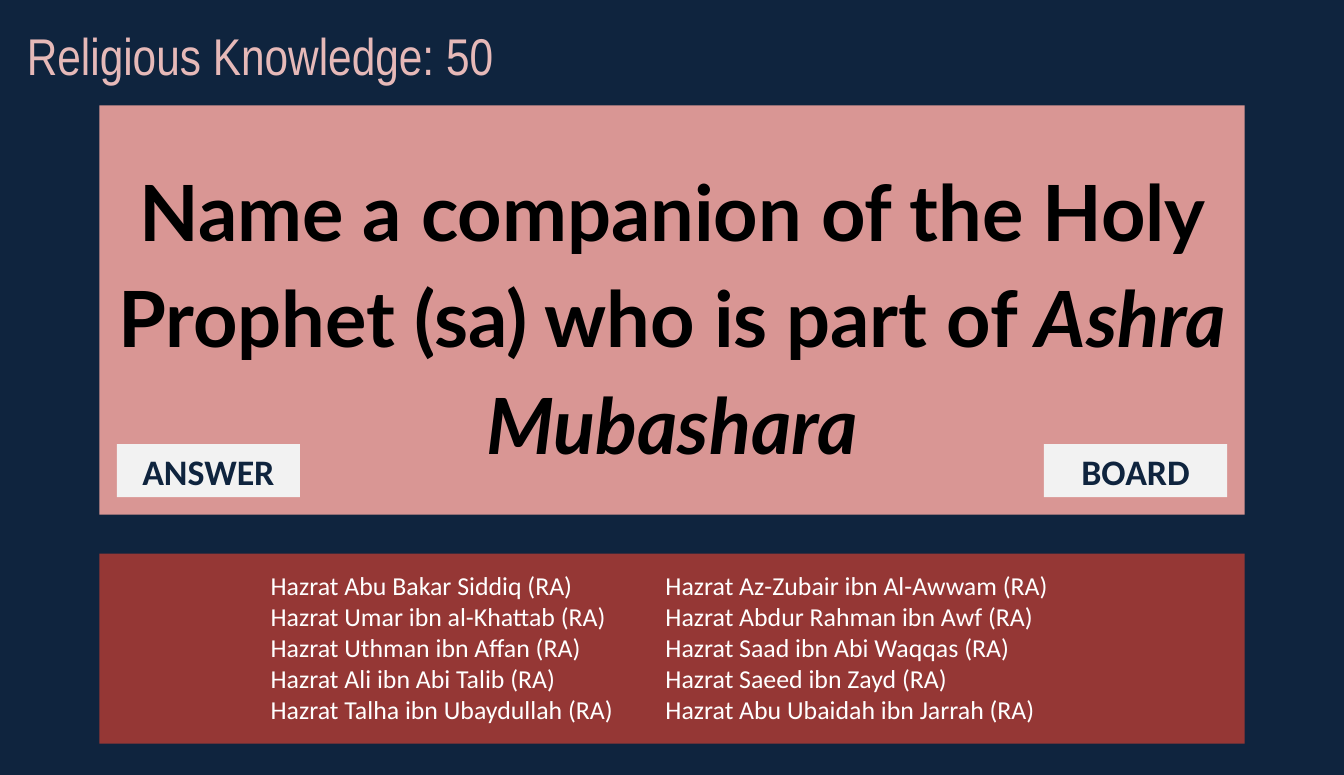
from pptx import Presentation
from pptx.dml.color import RGBColor as Rgb
from pptx.enum.shapes import MSO_SHAPE as Kind
from pptx.enum.text import MSO_ANCHOR as Anchor, MSO_AUTO_SIZE as Fit, PP_ALIGN as Align
from pptx.util import Cm, Pt

HUES = {
    "navy": "0F243E",
    "rose": "D99694",
    "brick": "953735",
    "blush": "E6B9B8",
    "pale": "F2F2F2",
    "black": "000000",
    "white": "FFFFFF",
}
NAMES = [
    ["Hazrat Abu Bakar Siddiq (RA)", "Hazrat Umar ibn al-Khattab (RA)",
     "Hazrat Uthman ibn Affan (RA)", "Hazrat Ali ibn Abi Talib (RA)",
     "Hazrat Talha ibn Ubaydullah (RA)"],
    ["Hazrat Az-Zubair ibn Al-Awwam (RA)", "Hazrat Abdur Rahman ibn Awf (RA)",
     "Hazrat Saad ibn Abi Waqqas (RA)", "Hazrat Saeed ibn Zayd (RA)",
     "Hazrat Abu Ubaidah ibn Jarrah (RA)"],
]


def hue(name):
    return Rgb.from_string(HUES[name])


def style(frame, face, size, tint, bold=False):
    for para in frame.paragraphs:
        for run in para.runs:
            run.font.name = face
            run.font.size = Pt(size)
            run.font.bold = bold
            run.font.color.rgb = hue(tint)


def add_block(slide, box, tint):
    block = slide.shapes.add_shape(Kind.RECTANGLE, *map(Cm, box))
    block.shadow.inherit = False
    block.fill.solid()
    block.fill.fore_color.rgb = hue(tint)
    block.line.fill.background()
    frame = block.text_frame
    frame.word_wrap = True
    frame.vertical_anchor = Anchor.MIDDLE
    frame.paragraphs[0].alignment = Align.CENTER
    return frame


def add_text(slide, box, lines, face, size, tint):
    frame = slide.shapes.add_textbox(*map(Cm, box)).text_frame
    frame.word_wrap = True
    frame.auto_size = Fit.SHAPE_TO_FIT_TEXT
    frame.text = "\n".join(lines)
    style(frame, face, size, tint)


def add_title(slide, box):
    add_text(slide, box, ["Religious Knowledge: 50"], "Arial Narrow", 36, "blush")


def add_button(slide, box, label):
    frame = add_block(slide, box, "pale")
    frame.paragraphs[0].text = label
    style(frame, "Calibri", 25, "navy", True)


def add_question(slide, box):
    left, top, width, height = box
    frame = add_block(slide, box, "rose")
    para = frame.paragraphs[0]
    para.text = "Name a companion of the Holy Prophet (sa) who is part of "
    term = para.add_run()
    term.text = "Ashra Mubashara"
    term.font.italic = True
    para.line_spacing = 1.15
    para.space_after = Pt(8)
    style(frame, "Lato", 54, "black", True)

    wide, high, inset = 4.5, 1.3, 0.43
    row = top + height - inset - high
    add_button(slide, (left + inset, row, wide, high), "ANSWER")
    add_button(slide, (left + width - inset - wide, row, wide, high), "BOARD")


def add_answers(slide, box):
    left, top, width, height = box
    add_block(slide, box, "brick")
    for names, shift, wide in zip(NAMES, (3.96, 13.66), (9.07, 14)):
        spot = (left + shift, top + 0.28, wide, 4.11)
        add_text(slide, spot, names, "Calibri", 18, "white")


def main():
    deck = Presentation()
    deck.slide_width = Cm(33.02)
    deck.slide_height = Cm(19.05)
    slide = deck.slides.add_slide(deck.slide_layouts[6])
    slide.background.fill.solid()
    slide.background.fill.fore_color.rgb = hue("navy")
    add_title(slide, (0.41, 0.46, 13.89, 1.8))
    add_question(slide, (2.44, 2.59, 28.14, 10.06))
    add_answers(slide, (2.44, 13.61, 28.14, 4.67))
    deck.save("out.pptx")


if __name__ == "__main__":
    main()
